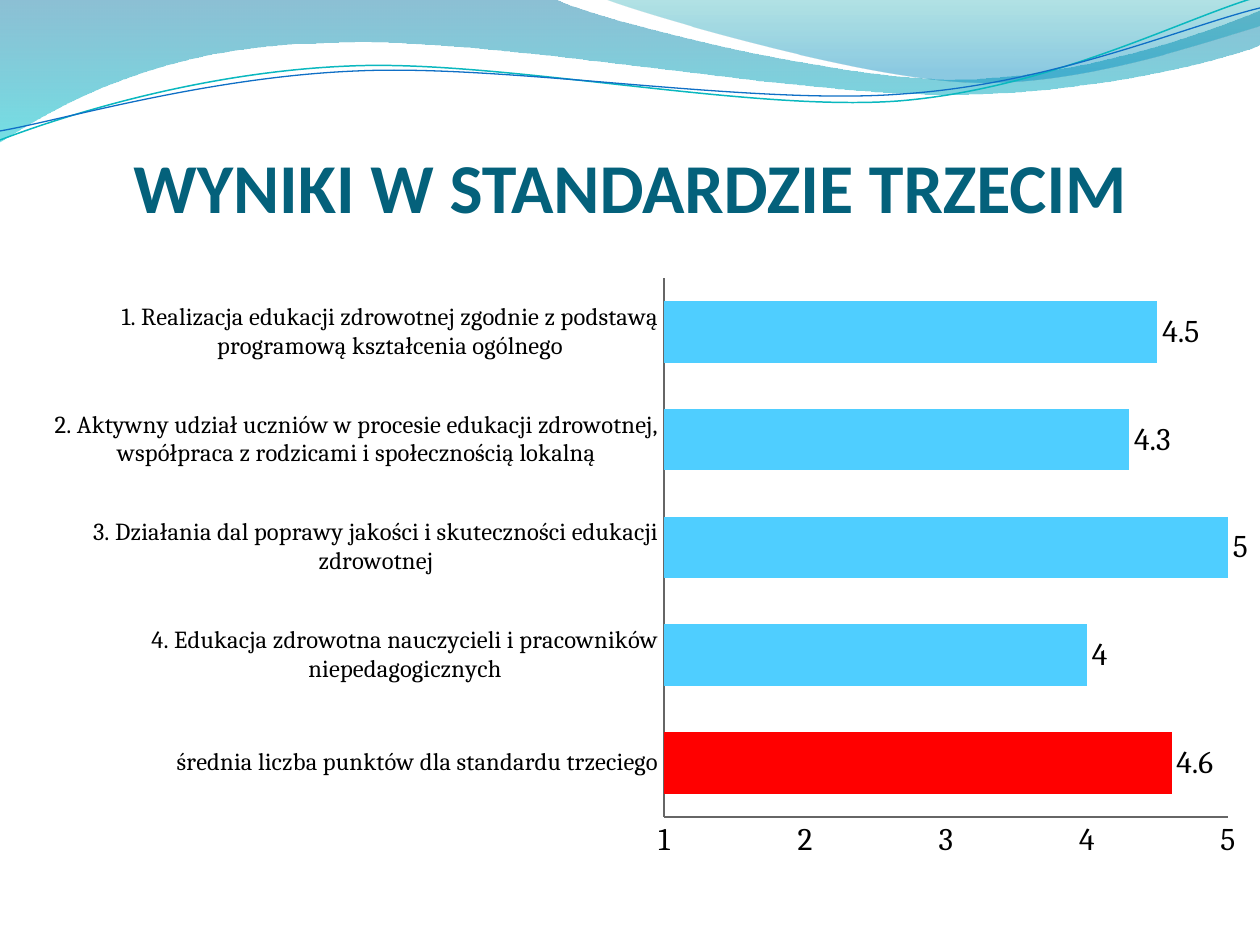
"""Build a slide with a wave header, a title and a bar chart of scores in standard three."""
from lxml import etree
from pptx import Presentation
from pptx import util as u
from pptx.chart.data import CategoryChartData
from pptx.dml.color import RGBColor
from pptx.enum import chart as charts, text
from pptx.oxml import ns

PX = 914400 / 126
COLORS = {
    "title": "04617B", "text": "000000", "bar": "4FCEFF", "average": "FF0000", "axis": "666666",
    "teal_line": "0AB8BF", "blue_line": "0F6FC6",
    "wave_top": "0074A1", "wave_bottom": "00C6CF", "crest_top": "00A1A9", "crest_bottom": "008BBF",
}


def color(name):
    return RGBColor.from_string(COLORS[name])


def add_curve(slide, start, segments, close):
    """Draw one-point segments as lines and three-point segments as Bezier curves."""
    builder = slide.shapes.build_freeform(*start, scale=PX)
    builder.add_line_segments([point for segment in segments for point in segment], close=close)
    shape = builder.convert_to_shape()
    shape.shadow.inherit = False
    lines = iter(list(shape.element.iter(ns.qn("a:lnTo"))))
    for segment in segments:
        first = next(lines)
        if len(segment) == 3:
            first.tag = ns.qn("a:cubicBezTo")
            for line in (next(lines), next(lines)):
                first.append(line[0])
                line.getparent().remove(line)
    return shape


presentation = Presentation()
presentation.slide_width, presentation.slide_height = u.Inches(10), u.Inches(7.5)
slide = presentation.slides.add_slide(presentation.slide_layouts[6])

waves = [
    ((0, 0), [
        [(554, -1)],
        [(600, 21), (837, 79), (955, 79)],
        [(1074, 79), (1207, 33), (1260, 11)],
        [(1261, 45)],
        [(1239, 55), (1096, 96), (940, 94)],
        [(782, 94), (481, 35), (324, 43)],
        [(163, 45), (58, 105), (-1, 142)],
    ], [("wave_top", 0, 45), ("wave_bottom", 1, 55)]),
    ((604, -1), [
        [(641, 14), (859, 78), (969, 82)],
        [(1079, 87), (1211, 40), (1260, 26)],
        [(1260, 0)],
    ], [("crest_top", 0, 30), ("crest_bottom", 0.8, 45)]),
]
for start, segments, stops in waves:
    shape = add_curve(slide, start, segments, True)
    shape.line.fill.background()
    shape.fill.gradient()
    shape.fill.gradient_angle = 270
    for stop, (name, position, _) in zip(shape.fill.gradient_stops, stops):
        stop.color.rgb = color(name)
        stop.position = position
    for element, (_, _, opacity) in zip(shape.element.spPr.iter(ns.qn("a:srgbClr")), stops):
        etree.SubElement(element, ns.qn("a:alpha"), val=str(opacity * 1000))

strands = [
    ((0, 140), [
        [(60, 117), (199, 72), (349, 66)],
        [(498, 59), (747, 112), (898, 101)],
        [(1049, 89), (1182, 19), (1257, -3)],
    ], "teal_line", 0.85),
    ((0, 131), [
        [(59, 121), (207, 77), (357, 71)],
        [(508, 64), (752, 106), (903, 94)],
        [(1053, 84), (1186, 26), (1260, 8)],
    ], "blue_line", 0.75),
]
for start, segments, name, width in strands:
    shape = add_curve(slide, start, segments, False)
    shape.fill.background()
    shape.line.color.rgb = color(name)
    shape.line.width = u.Pt(width)

title = slide.shapes.add_textbox(*(round(value * PX) for value in (63, 97, 1134, 130)))
frame = title.text_frame
frame_format = {
    "word_wrap": True, "vertical_anchor": text.MSO_ANCHOR.BOTTOM,
    "margin_left": 0, "margin_right": 0, "margin_top": u.Inches(0.05), "margin_bottom": 0,
}
for key, value in frame_format.items():
    setattr(frame, key, value)
paragraph = frame.paragraphs[0]
paragraph.text = "WYNIKI W STANDARDZIE TRZECIM"
paragraph.alignment = text.PP_ALIGN.CENTER
for key, value in {"name": "Calibri", "size": u.Pt(40), "bold": True}.items():
    setattr(paragraph.font, key, value)
paragraph.font.color.rgb = color("title")

scores = {
    "średnia liczba punktów dla standardu trzeciego": 4.6,
    "4. Edukacja zdrowotna nauczycieli i pracowników niepedagogicznych": 4,
    "3. Działania dal poprawy jakości i skuteczności edukacji zdrowotnej": 5,
    "2. Aktywny udział uczniów w procesie edukacji zdrowotnej, "
    "współpraca z rodzicami i społecznością lokalną": 4.3,
    "1. Realizacja edukacji zdrowotnej zgodnie z podstawą programową kształcenia ogólnego": 4.5,
}
data = CategoryChartData()
data.categories = list(scores)
data.add_series("Series 1", list(scores.values()))
chart_box = (29, 266, 1231, 605)
chart = slide.shapes.add_chart(
    charts.XL_CHART_TYPE.BAR_CLUSTERED, *(round(value * PX) for value in chart_box), data).chart
chart.has_legend = False
chart.has_title = False
chart.font.name = "Cambria"
chart.font.size = u.Pt(18)
chart.font.color.rgb = color("text")

plot = chart.plots[0]
plot.gap_width = 75
plot.vary_by_categories = False
series = plot.series[0]
for bar, name in ((series, "bar"), (series.points[0], "average")):
    bar.format.fill.solid()
    bar.format.fill.fore_color.rgb = color(name)
plot.has_data_labels = True
plot.data_labels.show_value = True
plot.data_labels.position = charts.XL_LABEL_POSITION.OUTSIDE_END

for axis in (chart.category_axis, chart.value_axis):
    axis.has_major_gridlines = False
    axis.major_tick_mark = axis.minor_tick_mark = charts.XL_TICK_MARK.NONE
    axis.format.line.color.rgb = color("axis")
    axis.format.line.width = u.Pt(0.75)
chart.category_axis.tick_labels.font.size = u.Pt(14)
for key, value in {"minimum_scale": 1, "maximum_scale": 5, "major_unit": 1}.items():
    setattr(chart.value_axis, key, value)

plot_area = chart.element.find(".//" + ns.qn("c:plotArea"))
for layout in plot_area.findall(ns.qn("c:layout")):
    plot_area.remove(layout)
layout = etree.Element(ns.qn("c:layout"))
plot_area.insert(0, layout)
manual = etree.SubElement(layout, ns.qn("c:manualLayout"))
left, top, width, height = chart_box
placement = {
    "layoutTarget": "inner", "xMode": "edge", "yMode": "edge",
    "x": (664 - left) / width, "y": (278 - top) / height, "w": 564 / width, "h": 539 / height,
}
for key, value in placement.items():
    etree.SubElement(manual, ns.qn("c:" + key), val=str(value))

presentation.save("out.pptx")
